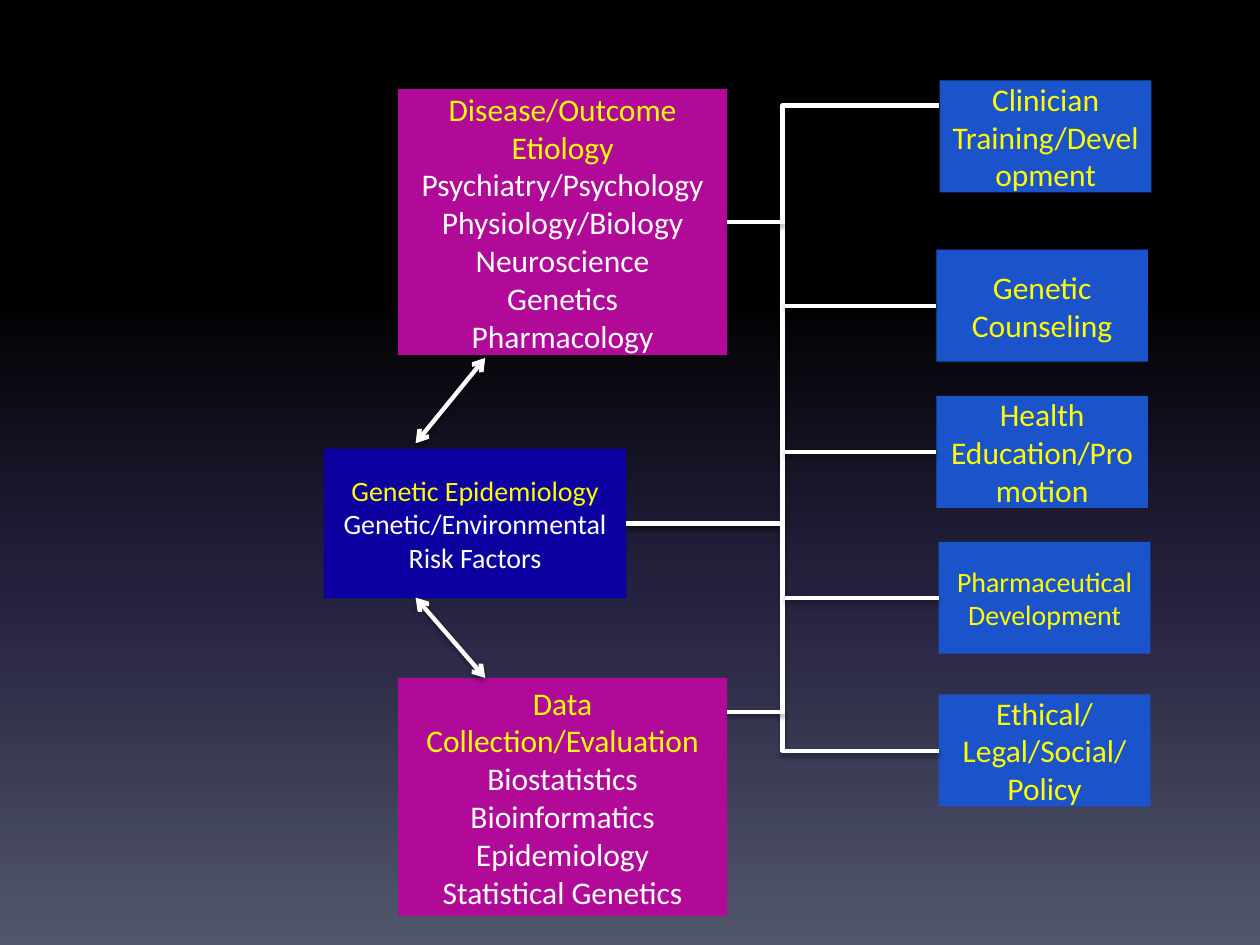
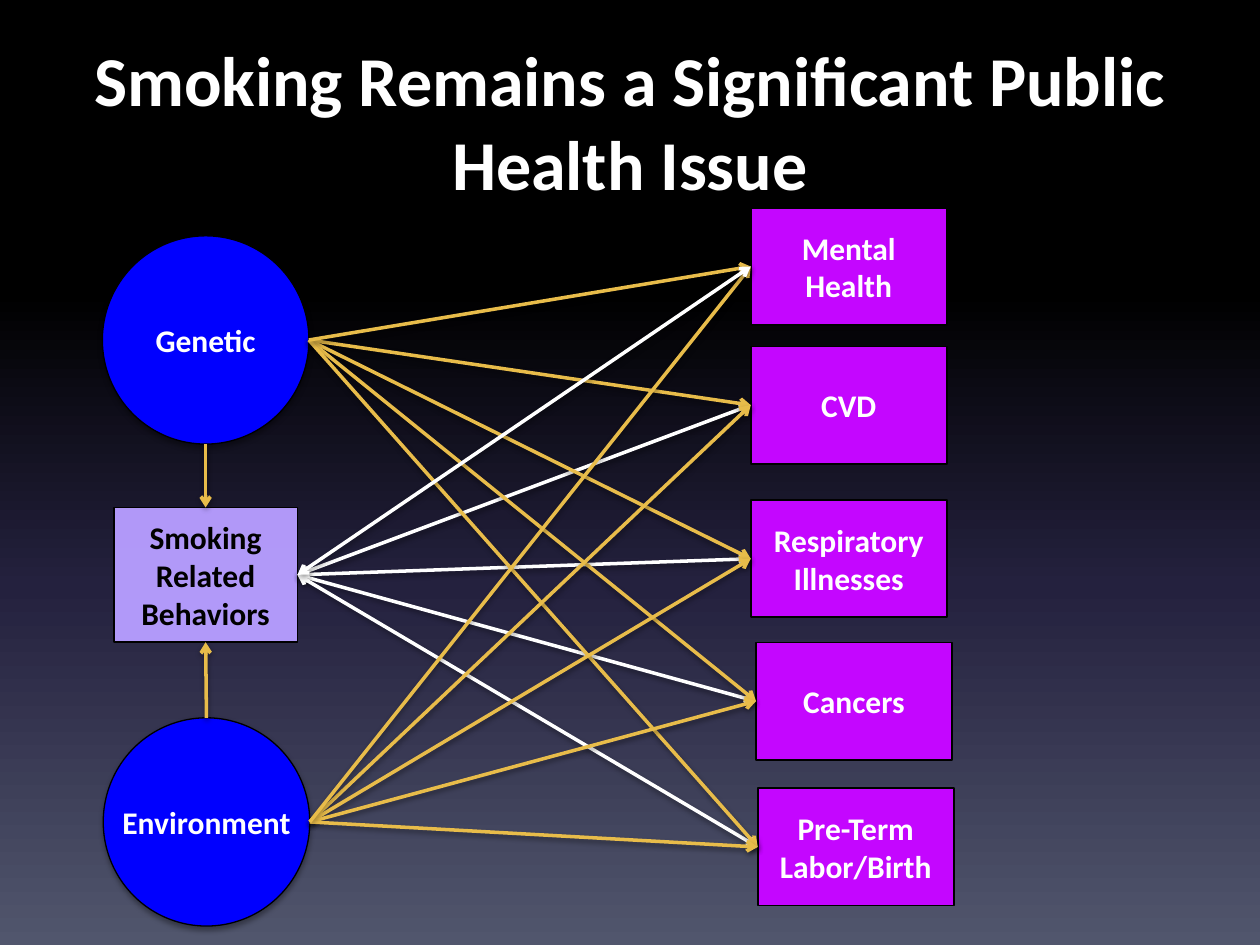
"""Build two diagram slides on genetic epidemiology and the health effects of smoking."""
from lxml.etree import SubElement
from pptx import Presentation
from pptx.dml.color import RGBColor
from pptx.enum.shapes import MSO_CONNECTOR, MSO_SHAPE
from pptx.enum.text import MSO_ANCHOR, PP_ALIGN
from pptx.oxml.ns import qn
from pptx.util import Pt

BLACK = RGBColor(0x00, 0x00, 0x00)
WHITE = RGBColor(0xFF, 0xFF, 0xFF)
YELLOW = RGBColor(0xFF, 0xFF, 0x00)
GOLD = RGBColor(0xE8, 0xBC, 0x4A)
NAVY = RGBColor(0x0C, 0x00, 0xA1)
MAGENTA = RGBColor(0xB2, 0x0A, 0x98)
MID_BLUE = RGBColor(0x1B, 0x53, 0xCB)
PURE_BLUE = RGBColor(0x00, 0x00, 0xFF)
LAVENDER = RGBColor(0xB6, 0x9D, 0xFF)
VIOLET = RGBColor(0xC4, 0x06, 0xFF)
BACKDROP = [(0, BLACK), (31, BLACK), (62, RGBColor(0x24, 0x21, 0x3E)),
            (100, RGBColor(0x51, 0x56, 0x6D))]
FONT = "Calibri"

EPIDEMIOLOGY = ("Genetic Epidemiology", ["Genetic/Environmental Risk Factors"])
ETIOLOGY = ("Disease/Outcome Etiology",
            ["Psychiatry/Psychology", "Physiology/Biology", "Neuroscience",
             "Genetics", "Pharmacology"])
DATA = ("Data Collection/Evaluation",
        ["Biostatistics", "Bioinformatics", "Epidemiology", "Statistical Genetics"])
FIELDS = [
    (EPIDEMIOLOGY, (185, 256.3, 173, 85.7), NAVY, 16),
    (ETIOLOGY, (227.5, 51, 188, 152), MAGENTA, 18),
    (DATA, (227.5, 387.4, 188, 136), MAGENTA, 18),
]
APPLICATIONS = [
    ("Clinician Training/Development", 537, 46, 18),
    ("Genetic Counseling", 535, 142.7, 18),
    ("Health Education/Promotion", 535, 226.2, 18),
    ("Pharmaceutical Development", 536.4, 309.6, 16),
    ("Ethical/Legal/Social/Policy", 536.4, 396.8, 18),
]
APPLICATION_SIZE = (121, 64)
TRUNK_X = 448.5
FIELD_ARROWS = [((277.3, 204.5), (237.5, 253.3)), ((277.3, 387.4), (237.5, 341.5))]
ELBOW_ENDS = [(536.4, 60.3), (536.4, 429)]
STUB_HEIGHTS = [127, 407]

TITLE = "Smoking Remains a Significant Public Health Issue"
SMOKING = ("Smoking Related Behaviors", (65, 290, 105, 77))
GENETIC = ("Genetic", (58.5, 134.8, 118, 119))
ENVIRONMENT = ("Environment", (59, 410.2, 118, 119))
ILLNESSES = [
    ("Mental Health", 429, 118.8),
    ("CVD", 429, 198),
    ("Respiratory Illnesses", 429, 285.8),
    ("Cancers", 432, 367.2),
    ("Pre-Term Labor/Birth", 433, 450.5),
]
ILLNESS_SIZE = (112, 67)


def paint_backdrop(master):
    fill = master.background.fill
    fill.gradient()
    fill.gradient_angle = 270
    stops = master.element.find(".//" + qn("a:gsLst"))
    stops.clear()
    for percent, color in BACKDROP:
        stop = SubElement(stops, qn("a:gs"), pos=str(percent * 1000))
        SubElement(stop, qn("a:srgbClr"), val=str(color))


def add_shadow(shape, opacity, distance):
    effects = SubElement(shape._element.spPr, qn("a:effectLst"))
    shadow = SubElement(effects, qn("a:outerShdw"), blurRad=str(Pt(3.1)),
                        dist=str(Pt(distance)), dir="5400000", rotWithShape="0")
    color = SubElement(shadow, qn("a:srgbClr"), val=str(BLACK))
    SubElement(color, qn("a:alpha"), val=str(opacity * 1000))


def write(frame, lines, size, bold=False):
    for index, (text, color) in enumerate(lines):
        para = frame.paragraphs[0] if index == 0 else frame.add_paragraph()
        para.alignment = PP_ALIGN.CENTER
        span = para.add_run()
        span.text = text
        span.font.name = FONT
        span.font.size = Pt(size)
        span.font.bold = bold
        span.font.color.rgb = color


def add_box(page, bounds, fill, lines, size=18, bold=False, outline=None,
            kind=MSO_SHAPE.RECTANGLE):
    box = page.shapes.add_shape(kind, *map(Pt, bounds))
    box.fill.solid()
    box.fill.fore_color.rgb = fill
    if outline:
        box.line.color.rgb = BLACK
        box.line.width = Pt(outline)
    else:
        box.line.fill.background()
    if kind == MSO_SHAPE.OVAL:
        add_shadow(box, 35, 1.8)
    else:
        box.shadow.inherit = False
    box.text_frame.word_wrap = kind != MSO_SHAPE.OVAL
    box.text_frame.vertical_anchor = MSO_ANCHOR.MIDDLE
    write(box.text_frame, lines, size, bold)
    return box


def add_link(page, start, end, color=WHITE, width=2.5, heads=(),
             kind=MSO_CONNECTOR.STRAIGHT):
    link = page.shapes.add_connector(kind, *map(Pt, (*start, *end)))
    link.line.color.rgb = color
    link.line.width = Pt(width)
    outline = link._element.spPr.find(qn("a:ln"))
    for head in heads:
        SubElement(outline, qn("a:" + head), type="arrow")
    add_shadow(link, 38, 1.6)


def edge(bounds, across, down):
    left, top, width, height = bounds
    return left + across * width, top + down * height


def build_fields(page):
    for (heading, topics), bounds, fill, size in FIELDS:
        lines = [(heading, YELLOW)] + [(topic, WHITE) for topic in topics]
        add_box(page, bounds, fill, lines, size)
    places = [(left, top, *APPLICATION_SIZE) for _, left, top, _ in APPLICATIONS]
    for (text, _, _, size), bounds in zip(APPLICATIONS, places):
        add_box(page, bounds, MID_BLUE, [(text, YELLOW)], size)

    for start, end in FIELD_ARROWS:
        add_link(page, start, end, heads=("headEnd", "tailEnd"))
    for end in ELBOW_ENDS:
        add_link(page, edge(FIELDS[0][1], 1, 0.5), end, kind=MSO_CONNECTOR.ELBOW)
    for bounds in places[1:4]:
        x, y = edge(bounds, 0, 0.5)
        add_link(page, (TRUNK_X, y), (x, y))
    for y in STUB_HEIGHTS:
        add_link(page, (edge(FIELDS[1][1], 1, 0)[0], y), (TRUNK_X, y))


def build_smoking(page):
    title = page.shapes.add_textbox(*map(Pt, (36, 17.3, 648, 90)))
    title.text_frame.word_wrap = True
    write(title.text_frame, [(TITLE, WHITE)], 40, True)

    text, behaviors = SMOKING
    box = add_box(page, behaviors, LAVENDER, [(text, BLACK)], bold=True, outline=1)
    color = box._element.spPr.find(qn("a:solidFill")).find(qn("a:srgbClr"))
    SubElement(color, qn("a:alpha"), val="97000")
    for text, bounds in (ENVIRONMENT, GENETIC):
        add_box(page, bounds, PURE_BLUE, [(text, WHITE)], bold=True, outline=0.75,
                kind=MSO_SHAPE.OVAL)
    places = [(left, top, *ILLNESS_SIZE) for _, left, top in ILLNESSES]
    for (text, _, _), bounds in zip(ILLNESSES, places):
        add_box(page, bounds, VIOLET, [(text, WHITE)], bold=True, outline=1)

    genes, surroundings = GENETIC[1], ENVIRONMENT[1]
    add_link(page, edge(genes, 0.5, 1), edge(behaviors, 0.5, 0), GOLD, 2, ["tailEnd"])
    add_link(page, edge(surroundings, 0.5, 0), edge(behaviors, 0.5, 1), GOLD, 2,
             ["tailEnd"])
    layers = [(places[1:], (behaviors, genes, surroundings)),
              (places[:1], (genes, surroundings, behaviors))]
    for targets, sources in layers:
        for source in sources:
            two_way = source is behaviors
            color = WHITE if two_way else GOLD
            heads = ("headEnd", "tailEnd") if two_way else ("tailEnd",)
            for target in targets:
                add_link(page, edge(source, 1, 0.5), edge(target, 0, 0.5), color, 2,
                         heads)


def main():
    deck = Presentation()
    deck.slide_width, deck.slide_height = Pt(720), Pt(540)
    paint_backdrop(deck.slide_master)
    for build in (build_fields, build_smoking):
        build(deck.slides.add_slide(deck.slide_layouts[6]))
    deck.save("out.pptx")


if __name__ == "__main__":
    main()
